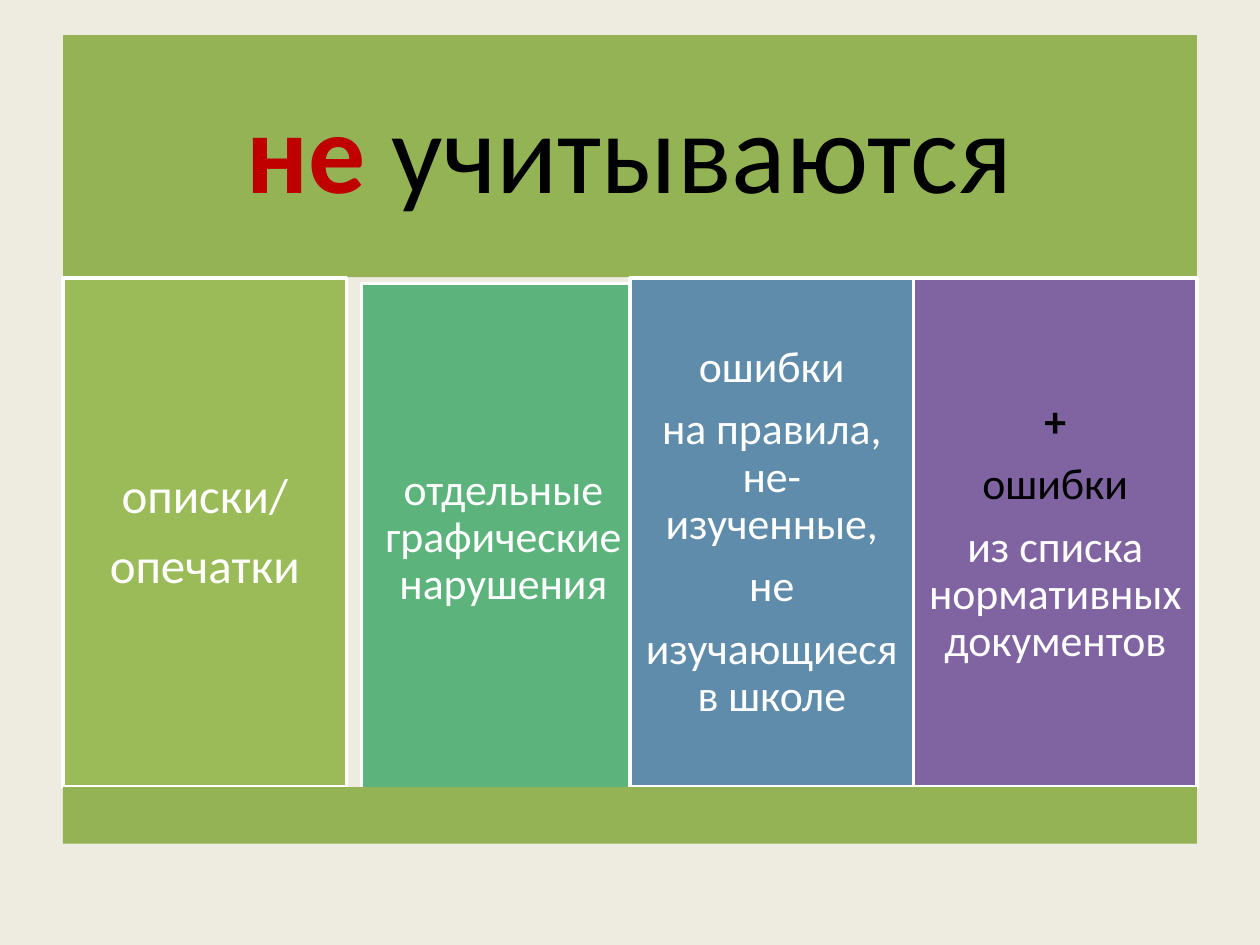
from dataclasses import dataclass

from pptx import Presentation
from pptx.dml.color import RGBColor
from pptx.enum.shapes import MSO_SHAPE
from pptx.enum.text import MSO_ANCHOR, MSO_AUTO_SIZE, PP_ALIGN
from pptx.util import Cm, Pt

RECT = MSO_SHAPE.RECTANGLE
MIDDLE = MSO_ANCHOR.MIDDLE
CENTER = PP_ALIGN.CENTER
NO_FIT = MSO_AUTO_SIZE.NONE
TITLE_ONLY = 5


@dataclass(frozen=True)
class Theme:
    font: str = "Calibri"
    page: str = "EEECE1"
    band: str = "94B355"
    lime: str = "9BBB59"
    green: str = "5CB37C"
    blue: str = "608CAB"
    violet: str = "8064A2"
    white: str = "FFFFFF"
    black: str = "000000"
    red: str = "C00000"
    head: int = 65
    large: int = 28
    body: int = 25
    edge: int = 2


THEME = Theme()
LEFT, WIDTH = 1.27, 22.86
COL = WIDTH / 4
TOP, HEIGHT = 5.61, 10.26


def paint(fill, color):
    fill.solid()
    fill.fore_color.rgb = RGBColor.from_string(color)


def style(run, size, color, bold=False):
    font = run.font
    font.name, font.size, font.bold = THEME.font, Pt(size), bold
    font.color.rgb = RGBColor.from_string(color)


def set_frame(frame, inset):
    frame.word_wrap = True
    frame.auto_size = NO_FIT
    frame.vertical_anchor = MIDDLE
    frame.margin_left = frame.margin_right = Cm(inset)
    frame.margin_top = frame.margin_bottom = Cm(inset)


def set_para(para, size):
    para.alignment = CENTER
    para.line_spacing = 0.9
    para.space_after = Pt(round(0.35 * size, 2))


def add_title(slide):
    title = slide.shapes.title
    title.left, title.top = Cm(LEFT), Cm(0.71)
    title.width, title.height = Cm(WIDTH), Cm(4.88)
    paint(title.fill, THEME.band)
    set_frame(title.text_frame, 0.69)
    para = title.text_frame.paragraphs[0]
    set_para(para, THEME.head)
    for text, color, bold in (("не", THEME.red, True),
                              (" учитываются", THEME.black, False)):
        run = para.add_run()
        run.text = text
        style(run, THEME.head, color, bold)


def add_rect(slide, left, top, width, height, color):
    box = slide.shapes.add_shape(RECT, Cm(left), Cm(top), Cm(width), Cm(height))
    box.shadow.inherit = False
    paint(box.fill, color)
    box.line.fill.background()
    return box


def add_panel(slide, left, top, color, size, lines, dark=0):
    """Add a column whose first `dark` lines are black, the very first bold."""
    box = add_rect(slide, left, top, COL, HEIGHT, color)
    paint(box.line.fill, THEME.white)
    box.line.width = Pt(THEME.edge)
    frame = box.text_frame
    set_frame(frame, 0.3 if size == THEME.large else 0.25)
    frame.text = "\n".join(lines)
    for i, para in enumerate(frame.paragraphs):
        set_para(para, size)
        ink = THEME.black if i < dark else THEME.white
        style(para.runs[0], size, ink, bold=i == 0 and dark > 0)


def main():
    deck = Presentation()
    deck.slide_width, deck.slide_height = Cm(25.4), Cm(19.05)
    slide = deck.slides.add_slide(deck.slide_layouts[TITLE_ONLY])
    paint(slide.background.fill, THEME.page)
    add_title(slide)
    add_panel(slide, LEFT, TOP, THEME.lime, THEME.large,
              ["описки/", "опечатки"])
    add_panel(slide, 7.29, 5.72, THEME.green, THEME.body,
              ["отдельные графические нарушения"])
    add_panel(slide, LEFT + 2 * COL, TOP, THEME.blue, THEME.body,
              ["ошибки", "на правила, не- изученные,", "не",
               "изучающиеся в школе"])
    add_panel(slide, LEFT + 3 * COL, TOP, THEME.violet, THEME.body,
              ["+", "ошибки", "из списка нормативных документов"], dark=2)
    add_rect(slide, LEFT, TOP + HEIGHT, WIDTH, 1.14, THEME.band)
    deck.save("out.pptx")


if __name__ == "__main__":
    main()
